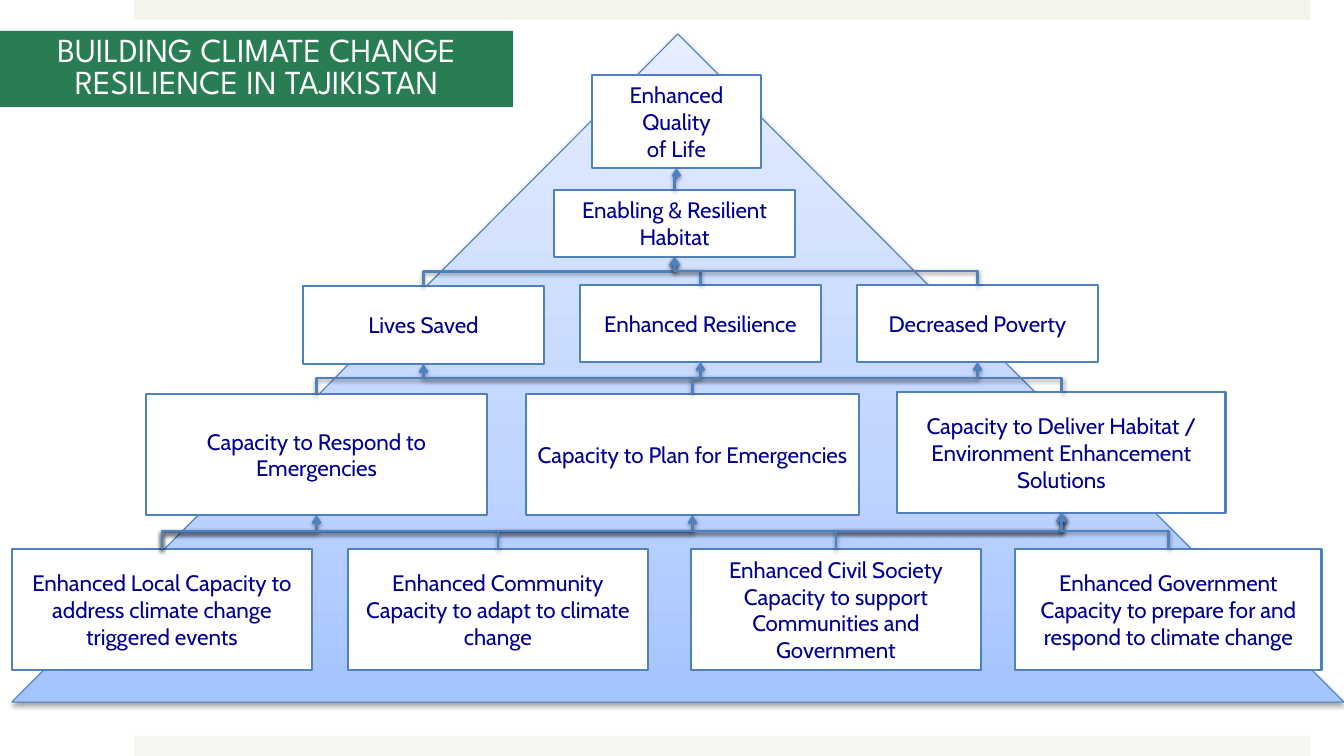
from dataclasses import dataclass

from pptx import Presentation
from pptx.dml.color import RGBColor
from pptx.enum.shapes import MSO_CONNECTOR, MSO_SHAPE
from pptx.enum.text import MSO_ANCHOR, PP_ALIGN
from pptx.oxml import parse_xml
from pptx.oxml.ns import nsdecls, qn
from pptx.shapes.autoshape import Shape
from pptx.shapes.connector import Connector
from pptx.slide import Slide
from pptx.util import Emu, Pt

SLIDE_WIDTH, SLIDE_HEIGHT = 1344, 756
EMU_PER_PX = 914400 / 100.8
OUTLINE = "4F81BD"
BOX_TEXT = "000090"
PYRAMID_STOPS = [(0, "A4C4FF"), (35, "BFD4FF"), (100, "E6EEFF")]


@dataclass(frozen=True)
class Box:
    """A rectangle in px, with its text."""

    left: int
    top: int
    width: int
    height: int
    text: str = ""

    @property
    def center(self) -> float:
        """Return the horizontal centre."""
        return self.left + self.width / 2

    @property
    def bottom(self) -> int:
        """Return the lower edge."""
        return self.top + self.height


BANDS = [(Box(134, 0, 1176, 20), "F4F3EC"), (Box(134, 736, 1176, 20), "F7F6F2")]
PYRAMID = Box(12, 34, 1332, 668)
TITLE = Box(0, 31, 513, 76, "BUILDING CLIMATE CHANGE RESILIENCE IN TAJIKISTAN")

QUALITY = Box(592, 75, 169, 93, "Enhanced Quality\nof Life")
HABITAT = Box(554, 190, 241, 67, "Enabling & Resilient Habitat")
LIVES = Box(303, 286, 241, 78, "Lives Saved")
RESILIENCE = Box(580, 285, 241, 77, "Enhanced Resilience")
POVERTY = Box(857, 285, 241, 77, "Decreased Poverty")
RESPOND = Box(146, 394, 341, 121, "Capacity to Respond to Emergencies")
PLAN = Box(526, 394, 333, 121, "Capacity to Plan for Emergencies")
DELIVER = Box(897, 392, 329, 121, "Capacity to Deliver Habitat / Environment Enhancement Solutions")
LOCAL = Box(12, 549, 300, 121, "Enhanced Local Capacity to address climate change triggered events")
COMMUNITY = Box(348, 549, 300, 121, "Enhanced Community Capacity to adapt to climate change")
CIVIL_SOCIETY = Box(
    691, 549, 290, 121, "Enhanced Civil Society Capacity to support Communities and Government"
)
GOVERNMENT = Box(
    1015, 549, 307, 121, "Enhanced Government Capacity to prepare for and respond to climate change"
)

BOXES = [
    LIVES, RESILIENCE, HABITAT, LOCAL, CIVIL_SOCIETY, GOVERNMENT,
    COMMUNITY, RESPOND, PLAN, DELIVER, POVERTY, QUALITY,
]
LINKS = [
    (LOCAL, RESPOND),
    (LOCAL, PLAN),
    (LOCAL, DELIVER),
    (COMMUNITY, DELIVER),
    (CIVIL_SOCIETY, DELIVER),
    (GOVERNMENT, DELIVER),
    (DELIVER, LIVES),
    (RESPOND, POVERTY),
    (PLAN, RESILIENCE),
    (LIVES, HABITAT),
    (RESILIENCE, HABITAT),
    (POVERTY, HABITAT),
    (HABITAT, QUALITY),
]


def px(length: float) -> Emu:
    """Turn px into EMU."""
    return Emu(round(length * EMU_PER_PX))


def color(value: str) -> RGBColor:
    """Turn a hex string into a colour."""
    return RGBColor.from_string(value)


def add_box(
    slide: Slide, box: Box, fill: str, line: str = "", line_width: float = 2,
    kind: MSO_SHAPE = MSO_SHAPE.RECTANGLE,
) -> Shape:
    """Draw a plain shape with an optional outline."""
    shape = slide.shapes.add_shape(kind, px(box.left), px(box.top), px(box.width), px(box.height))
    shape.shadow.inherit = False
    shape.fill.solid()
    shape.fill.fore_color.rgb = color(fill)
    if line:
        shape.line.color.rgb = color(line)
        shape.line.width = Pt(line_width)
    else:
        shape.line.fill.background()
    return shape


def write_text(
    shape: Shape, text: str, font: str, size: int, text_color: str, line_spacing: float = 1.0
) -> None:
    """Write centred paragraphs into a shape."""
    frame = shape.text_frame
    frame.text = text
    frame.word_wrap = True
    frame.vertical_anchor = MSO_ANCHOR.MIDDLE
    for paragraph in frame.paragraphs:
        paragraph.alignment = PP_ALIGN.CENTER
        paragraph.line_spacing = line_spacing
        for run in paragraph.runs:
            run.font.name = font
            run.font.size = Pt(size)
            run.font.color.rgb = color(text_color)


def add_shadow(shape: Shape | Connector) -> None:
    """Give a shape or connector a soft shadow below it."""
    properties = shape._element.spPr
    for effects in properties.findall(qn("a:effectLst")):
        properties.remove(effects)
    properties.append(parse_xml(
        f'<a:effectLst {nsdecls("a")}>'
        '<a:outerShdw blurRad="40000" dist="20000" dir="5400000" rotWithShape="0">'
        '<a:srgbClr val="000000"><a:alpha val="38000"/></a:srgbClr>'
        '</a:outerShdw></a:effectLst>'
    ))


def add_pyramid(slide: Slide) -> None:
    """Draw the shaded triangle behind the boxes."""
    shape = add_box(slide, PYRAMID, "FFFFFF", "4B7EBC", 0.75, MSO_SHAPE.ISOSCELES_TRIANGLE)
    stops = "".join(
        f'<a:gs pos="{position * 1000}"><a:srgbClr val="{value}"/></a:gs>'
        for position, value in PYRAMID_STOPS
    )
    gradient = parse_xml(
        f'<a:gradFill {nsdecls("a")} rotWithShape="1"><a:gsLst>{stops}</a:gsLst>'
        '<a:lin ang="16200000" scaled="0"/></a:gradFill>'
    )
    properties = shape._element.spPr
    properties.replace(properties.find(qn("a:solidFill")), gradient)
    add_shadow(shape)


def add_link(slide: Slide, source: Box, target: Box) -> None:
    """Draw an elbow arrow from the top of one box up to the bottom of another."""
    rise = source.top - target.bottom
    reach = abs(target.center - source.center)
    left = (source.center + target.center - rise) / 2
    top = (source.top + target.bottom - reach) / 2
    begin_x, end_x, turn = left + rise, left, 90
    if target.center < source.center:
        begin_x, end_x, turn = left, left + rise, 270
    connector = slide.shapes.add_connector(
        MSO_CONNECTOR.ELBOW, px(begin_x), px(top + reach), px(end_x), px(top)
    )
    connector.line.color.rgb = color(OUTLINE)
    connector.line.width = Pt(2)
    properties = connector._element.spPr
    properties.find(qn("a:xfrm")).set("rot", str(turn * 60000))
    properties.find(qn("a:ln")).append(parse_xml(f'<a:tailEnd {nsdecls("a")} type="arrow"/>'))
    add_shadow(connector)


def main() -> None:
    """Build the slide and save it."""
    presentation = Presentation()
    presentation.slide_width = px(SLIDE_WIDTH)
    presentation.slide_height = px(SLIDE_HEIGHT)
    slide = presentation.slides.add_slide(presentation.slide_layouts[6])
    for band, fill in BANDS:
        add_box(slide, band, fill)
    add_pyramid(slide)
    for box in BOXES:
        write_text(add_box(slide, box, "FFFFFF", OUTLINE), box.text, "Cabin", 16, BOX_TEXT)
    for source, target in LINKS:
        add_link(slide, source, target)
    title = add_box(slide, TITLE, "297D53")
    write_text(title, TITLE.text, "League Spartan", 24, "FFFFFF", 0.8)
    presentation.save("out.pptx")


if __name__ == "__main__":
    main()
